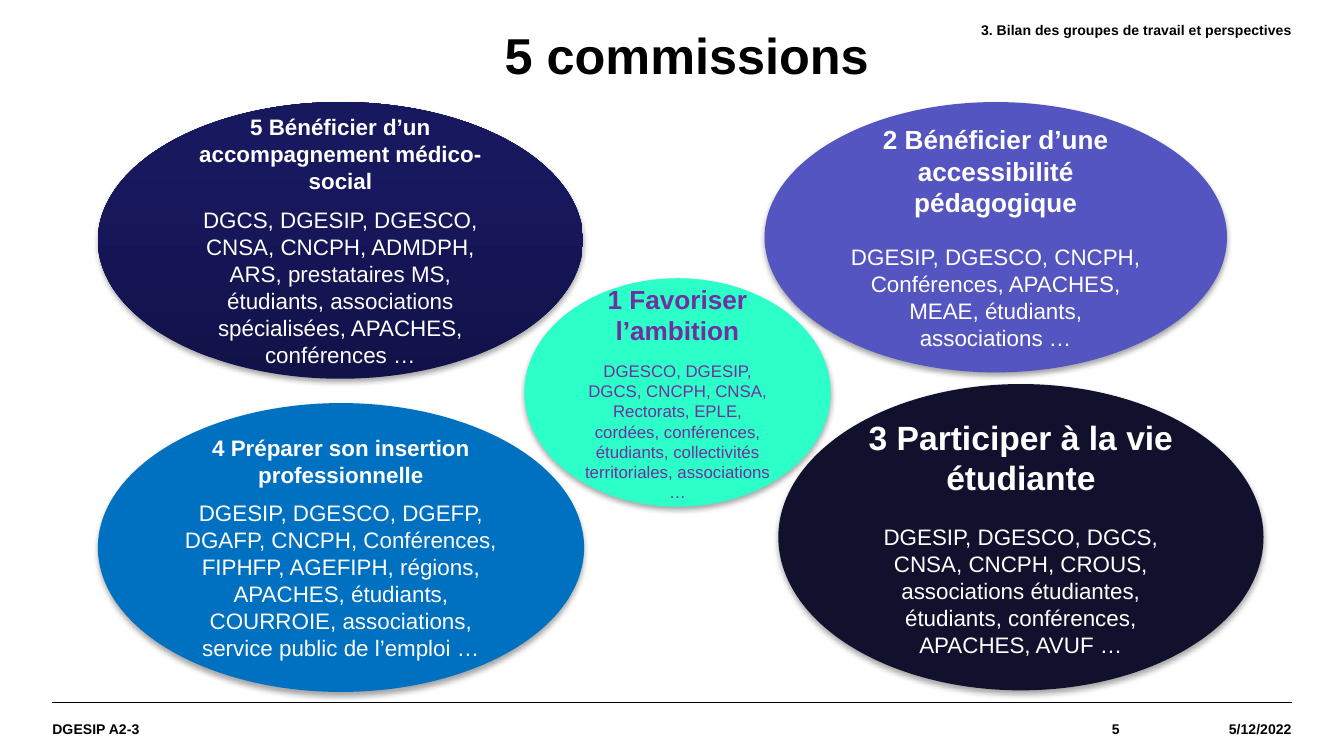
"""Build the slide presenting the five commissions and their members."""
from copy import deepcopy

from lxml.etree import SubElement
from pptx import Presentation
from pptx.dml.color import RGBColor
from pptx.enum.shapes import MSO_CONNECTOR as Connector, MSO_SHAPE as Shape
from pptx.enum.text import MSO_ANCHOR as Anchor, MSO_AUTO_SIZE as AutoSize, PP_ALIGN as Align
from pptx.oxml.ns import qn
from pptx.util import Cm, Pt

COLORS = {
    "black": "000000",
    "white": "FFFFFF",
    "navy": ["12124A", "18185F", "161661"],
    "indigo": "5555C1",
    "blue": "0070C0",
    "midnight": "11112D",
    "mint": "2CFFC8",
    "purple": "7030A0",
}
FONT = "Arial"
LEFT, RIGHT = 0.99, 24.41
FOOTER_TOP = 13.28
BAND_HEIGHT = 0.99

COMMISSIONS = [
    dict(box=(1.85, 1.93, 9.17, 5.23), fill="navy", title_size=12, gap=7,
         title="5 Bénéficier d’un accompagnement médico-social",
         members="DGCS, DGESIP, DGESCO, CNSA, CNCPH, ADMDPH, ARS, prestataires MS, "
                 "étudiants, associations spécialisées, APACHES, conférences …"),
    dict(box=(14.45, 1.93, 8.74, 5.11), fill="indigo", title_size=14, gap=13.8,
         title="2 Bénéficier d’une accessibilité pédagogique",
         members="DGESIP, DGESCO, CNCPH, Conférences, APACHES, MEAE, étudiants, "
                 "associations …"),
    dict(box=(1.85, 7.62, 9.19, 5.46), fill="blue", title_size=12, gap=6,
         title="4 Préparer son insertion professionnelle",
         members="DGESIP, DGESCO, DGEFP, DGAFP, CNCPH, Conférences, FIPHFP, AGEFIPH, "
                 "régions, APACHES, étudiants, COURROIE, associations, service public "
                 "de l’emploi …"),
    dict(box=(14.71, 7.26, 9.17, 5.79), fill="midnight", title_size=18, gap=13.8,
         title="3 Participer à la vie étudiante",
         members="DGESIP, DGESCO, DGCS, CNSA, CNCPH, CROUS, associations étudiantes, "
                 "étudiants, conférences, APACHES, AVUF …"),
    dict(box=(9.91, 5.26, 5.79, 4.32), fill="mint", title_size=14, gap=8,
         title="1 Favoriser l’ambition", color="purple", member_size=9,
         members="DGESCO, DGESIP, DGCS, CNCPH, CNSA, Rectorats, EPLE, cordées, "
                 "conférences, étudiants, collectivités territoriales, associations …"),
]


def rgb(name):
    """Return the named colour."""
    return RGBColor.from_string(COLORS[name])


def add_run(paragraph, text, size, color="black", bold=True):
    """Append a formatted run to a paragraph."""
    run = paragraph.add_run()
    run.text = text
    run.font.name = FONT
    run.font.size = Pt(size)
    run.font.bold = bold
    run.font.color.rgb = rgb(color)


def clear_margins(frame):
    """Remove the inner margins of a text frame."""
    frame.margin_left = frame.margin_right = frame.margin_top = frame.margin_bottom = 0


def add_shadow(shape):
    """Give a shape a soft shadow falling downwards."""
    shape.shadow.inherit = False
    effects = shape._element.spPr.find(qn("a:effectLst"))
    shadow = SubElement(effects, qn("a:outerShdw"), blurRad=str(Pt(3.1)),
                        dist=str(Pt(1.8)), dir="5400000", rotWithShape="0")
    color = SubElement(shadow, qn("a:srgbClr"), val=COLORS["black"])
    SubElement(color, qn("a:alpha"), val="35000")


def fill_gradient(shape, colors):
    """Fill a shape with a three-stop gradient running from bottom to top."""
    shape.fill.gradient()
    shape.fill.gradient_angle = 90
    stops = shape._element.spPr.find(qn("a:gradFill")).find(qn("a:gsLst"))
    stops.insert(1, deepcopy(stops[0]))
    for stop, color, position in zip(shape.fill.gradient_stops, colors, (0, 0.8, 1)):
        stop.color.rgb = RGBColor.from_string(color)
        stop.position = position


def add_commission(slide, box, fill, title, title_size, members, gap,
                   color="white", member_size=12):
    """Draw one commission as an ellipse with its title and members."""
    ellipse = slide.shapes.add_shape(Shape.OVAL, *map(Cm, box))
    if isinstance(COLORS[fill], list):
        fill_gradient(ellipse, COLORS[fill])
    else:
        ellipse.fill.solid()
        ellipse.fill.fore_color.rgb = rgb(fill)
    ellipse.line.fill.background()
    add_shadow(ellipse)
    frame = ellipse.text_frame
    frame.word_wrap = True
    frame.vertical_anchor = Anchor.MIDDLE
    heading = frame.paragraphs[0]
    heading.alignment = Align.CENTER
    add_run(heading, title, title_size, color)
    body = frame.add_paragraph()
    body.alignment = Align.CENTER
    body.space_before = Pt(gap)
    add_run(body, members, member_size, color, bold=False)


def add_label(slide, text, left, top, width, align=Align.RIGHT, anchor=Anchor.MIDDLE):
    """Add a small header or footer text."""
    box = slide.shapes.add_textbox(Cm(left), Cm(top), Cm(width), Cm(BAND_HEIGHT))
    frame = box.text_frame
    frame.word_wrap = True
    frame.vertical_anchor = anchor
    clear_margins(frame)
    paragraph = frame.paragraphs[0]
    paragraph.alignment = align
    add_run(paragraph, text, 7.5)


def set_title(slide, text):
    """Place and format the slide title."""
    title = slide.shapes.title
    title.left, title.top, title.width, title.height = map(Cm, (1.27, 0.58, 23.42, 2.01))
    frame = title.text_frame
    frame.auto_size = AutoSize.NONE
    frame.vertical_anchor = Anchor.TOP
    clear_margins(frame)
    paragraph = frame.paragraphs[0]
    paragraph.alignment = Align.CENTER
    paragraph.line_spacing = 0.9
    add_run(paragraph, text, 27)


def add_footer_line(slide):
    """Draw the thin line above the footer."""
    line = slide.shapes.add_connector(Connector.STRAIGHT, Cm(LEFT), Cm(FOOTER_TOP),
                                      Cm(RIGHT), Cm(FOOTER_TOP))
    line.line.color.rgb = rgb("black")
    line.line.width = Pt(0.8)
    SubElement(line._element.spPr, qn("a:effectLst"))


def main():
    """Build and save the presentation."""
    presentation = Presentation()
    presentation.slide_width, presentation.slide_height = Cm(25.4), Cm(14.29)
    slide = presentation.slides.add_slide(presentation.slide_layouts[5])
    add_footer_line(slide)
    for commission in COMMISSIONS:
        add_commission(slide, **commission)
    set_title(slide, "5 commissions")
    add_label(slide, "DGESIP A2-3", LEFT, FOOTER_TOP, 16.41, Align.LEFT)
    add_label(slide, "5/12/2022", 21.16, FOOTER_TOP, 3.25)
    add_label(slide, "5", 17.4, FOOTER_TOP, 3.76)
    add_label(slide, "3. Bilan des groupes de travail et perspectives", 9.2, 0.41, 15.21,
              anchor=Anchor.TOP)
    presentation.save("out.pptx")


if __name__ == "__main__":
    main()
